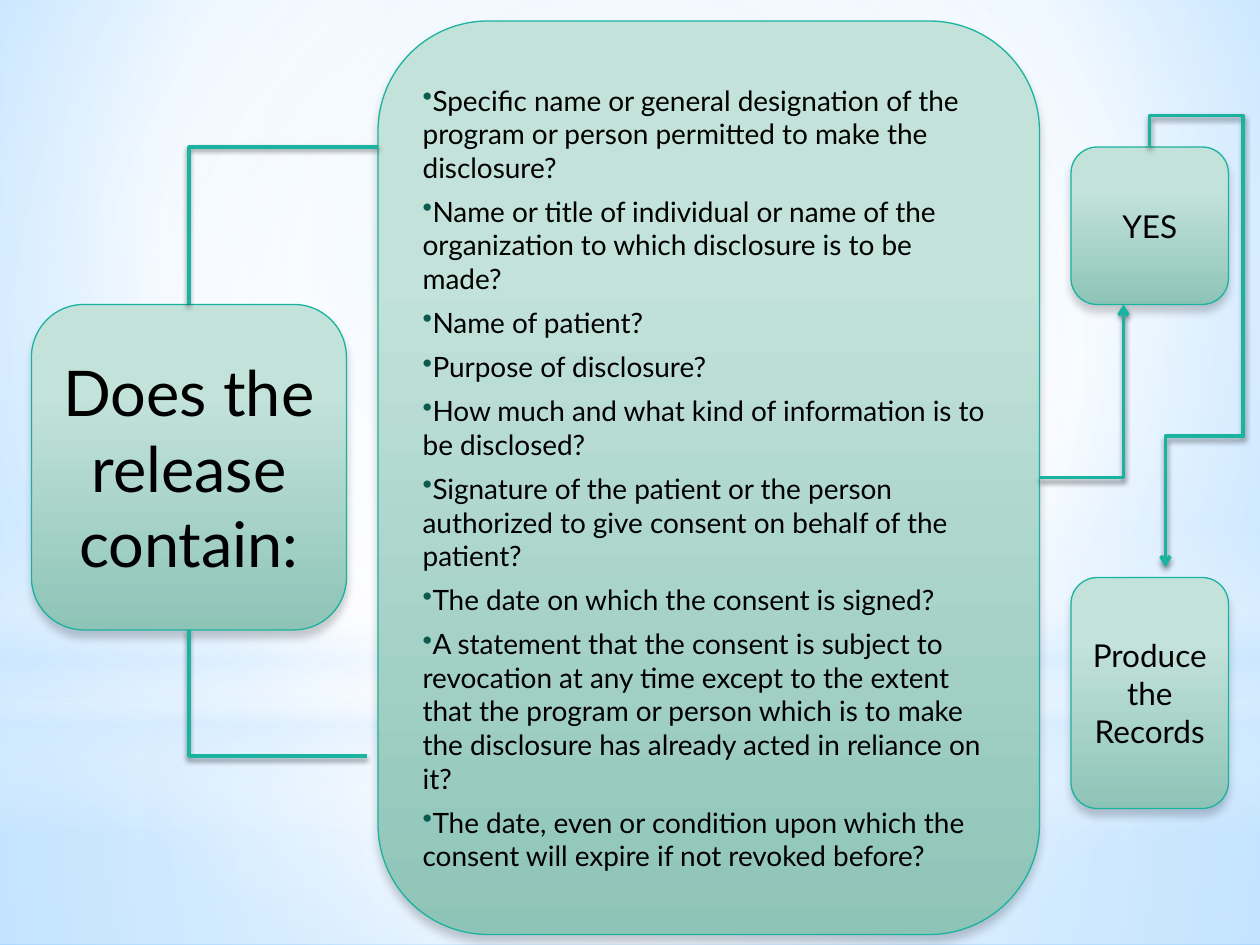
from lxml.etree import SubElement
from pptx import Presentation
from pptx.dml.color import RGBColor
from pptx.enum.shapes import MSO_CONNECTOR, MSO_SHAPE
from pptx.enum.text import MSO_ANCHOR, PP_ALIGN
from pptx.oxml.ns import qn
from pptx.util import Pt

FONT = "Lato"
TEAL, BULLET, BLACK = "1AB39F", "0D5A4F", "000000"
BOX_STOPS = [(28, "C2E2DA", 100), (100, "8EC4B7", 100)]
CENTRE = (50, 50, 50, 50)
BACKGROUND = [(0, "C2E3FF", 100), (60, "FFFFFF", 100), (100, "79C1FF", 100)]

GLOWS = [
    (MSO_SHAPE.RECTANGLE, (0, 402, 720, 138), CENTRE,
     [(0, "FFFFFF", 91), (37, "FFFFFF", 76), (100, "D6ECFF", 79)]),
    (MSO_SHAPE.RECTANGLE, (0, 0, 720, 402), CENTRE,
     [(0, "FFFFFF", 89), (48, "FFFFFF", 62), (100, "D6ECFF", 79)]),
    (MSO_SHAPE.RECTANGLE, (0, 297, 720, 180), None,
     [(0, "FFFFFF", 0), (29, "FFFFFF", 30), (45, "D6ECFF", 40),
      (55, "FFFFFF", 26), (65, "D6ECFF", 60), (100, "FFFFFF", 0)]),
    (MSO_SHAPE.OVAL, (0, 126, 720, 402), CENTRE,
     [(0, "FFFFFF", 100), (56, "FFFFFF", 0)]),
]
REQUIREMENTS = [
    "Specific name or general designation of the program or person permitted to make the disclosure?",
    "Name or title of individual or name of the organization to which disclosure is to be made?",
    "Name of patient?",
    "Purpose of disclosure?",
    "How much and what kind of information is to be disclosed?",
    "Signature of the patient or the person authorized to give consent on behalf of the patient?",
    "The date on which the consent is signed?",
    "A statement that the consent is subject to revocation at any time except to the extent that "
    "the program or person which is to make the disclosure has already acted in reliance on it?",
    "The date, even or condition upon which the consent will expire if not revoked before?",
]
BOXES = [
    ((18, 174, 180, 186), ["Does the release contain:"], 36, False),
    ((216, 12, 378, 522), REQUIREMENTS, 16, True),
    ((612, 84, 90, 90), ["YES"], 18, False),
    ((612, 330, 90, 132), ["Produce the Records"], 18, False),
]
CONNECTORS = [
    ((594, 273), (642, 174), "bentConnector2", 0, "v", (), True),
    ((657, 84), (666, 324), "bentConnector5", 270, "h", (-7500, 591600, 68800), True),
    ((108, 174), (216, 84), "bentConnector2", 90, "hv", (), False),
    ((108, 360), (210, 432), "bentConnector2", 270, "h", (), False),
]


def add_node(parent, tag, **attributes):
    return SubElement(parent, qn(tag), {key: str(value) for key, value in attributes.items()})


def add_color(parent, color, opacity=100):
    node = add_node(parent, "a:srgbClr", val=color)
    if opacity < 100:
        add_node(node, "a:alpha", val=opacity * 1000)


def set_gradient(owner, fill, stops, focus=None):
    """Fill with a circular gradient around focus, or a vertical one without it."""
    fill.gradient()
    gradient = owner.element.find(".//" + qn("a:gradFill"))
    for child in list(gradient):
        gradient.remove(child)
    stop_list = add_node(gradient, "a:gsLst")
    for position, color, opacity in stops:
        add_color(add_node(stop_list, "a:gs", pos=position * 1000), color, opacity)
    if focus:
        circle = add_node(gradient, "a:path", path="circle")
        add_node(circle, "a:fillToRect", **{side: value * 1000 for side, value in zip("ltrb", focus)})
    else:
        add_node(gradient, "a:lin", ang=5400000, scaled=0)


def add_shadow(effects, opacity, blur, distance):
    shadow = add_node(effects, "a:outerShdw", blurRad=Pt(blur), dist=Pt(distance),
                      dir=5400000, algn="ctr", rotWithShape=0)
    add_color(shadow, BLACK, opacity)


def set_line(line, width):
    line.color.rgb = RGBColor.from_string(TEAL)
    line.width = Pt(width)


def add_filled_shape(page, kind, place, stops, focus=None):
    shape = page.shapes.add_shape(kind, *map(Pt, place))
    shape.shadow.inherit = False
    set_gradient(shape, shape.fill, stops, focus)
    return shape


def add_box(page, place, lines, size, bulleted):
    box = add_filled_shape(page, MSO_SHAPE.FLOWCHART_ALTERNATE_PROCESS, place, BOX_STOPS)
    set_line(box.line, 0.75)
    add_shadow(box.element.spPr.find(qn("a:effectLst")), 20, 5, 4)
    frame = box.text_frame
    frame.word_wrap = True
    frame.vertical_anchor = MSO_ANCHOR.MIDDLE
    frame.text = "\n".join(lines)
    for para in frame.paragraphs:
        para.alignment = PP_ALIGN.LEFT if bulleted else PP_ALIGN.CENTER
        font = para.runs[0].font
        font.name, font.size = FONT, Pt(size)
        font.color.rgb = RGBColor.from_string(BLACK)
        if bulleted:
            para.space_after = Pt(6)
            properties = para._p.get_or_add_pPr()
            add_color(add_node(properties, "a:buClr"), BULLET)
            add_node(properties, "a:buChar", char="•")


def add_elbow(page, start, end, preset, turn, flips, adjustments, arrow):
    """Join two points, with the frame turned about their midpoint."""
    elbow = page.shapes.add_connector(MSO_CONNECTOR.ELBOW, 0, 0, 0, 0)
    width, height = (abs(b - a) for a, b in zip(start, end))
    if turn % 180:
        width, height = height, width
    middle_x, middle_y = ((a + b) / 2 for a, b in zip(start, end))
    elbow.left, elbow.top = Pt(middle_x - width / 2), Pt(middle_y - height / 2)
    elbow.width, elbow.height = Pt(width), Pt(height)
    properties = elbow.element.spPr
    frame = properties.find(qn("a:xfrm"))
    frame.set("rot", str(turn * 60000))
    for flip in flips:
        frame.set("flip" + flip.upper(), "1")
    geometry = properties.find(qn("a:prstGeom"))
    geometry.set("prst", preset)
    guides = geometry.find(qn("a:avLst"))
    for number, value in enumerate(adjustments, 1):
        add_node(guides, "a:gd", name=f"adj{number}", fmla=f"val {value}")
    set_line(elbow.line, 2)
    if arrow:
        add_node(properties.find(qn("a:ln")), "a:tailEnd", type="arrow")
    add_shadow(add_node(properties, "a:effectLst"), 45, 3.1, 1.8)


def main():
    deck = Presentation()
    deck.slide_width, deck.slide_height = Pt(720), Pt(540)
    page = deck.slides.add_slide(deck.slide_layouts[6])
    set_gradient(page, page.background.fill, BACKGROUND, (20, 10, 20, 60))
    for kind, place, focus, stops in GLOWS:
        add_filled_shape(page, kind, place, stops, focus).line.fill.background()
    for box in BOXES:
        add_box(page, *box)
    for connector in CONNECTORS:
        add_elbow(page, *connector)
    deck.save("out.pptx")


if __name__ == "__main__":
    main()
